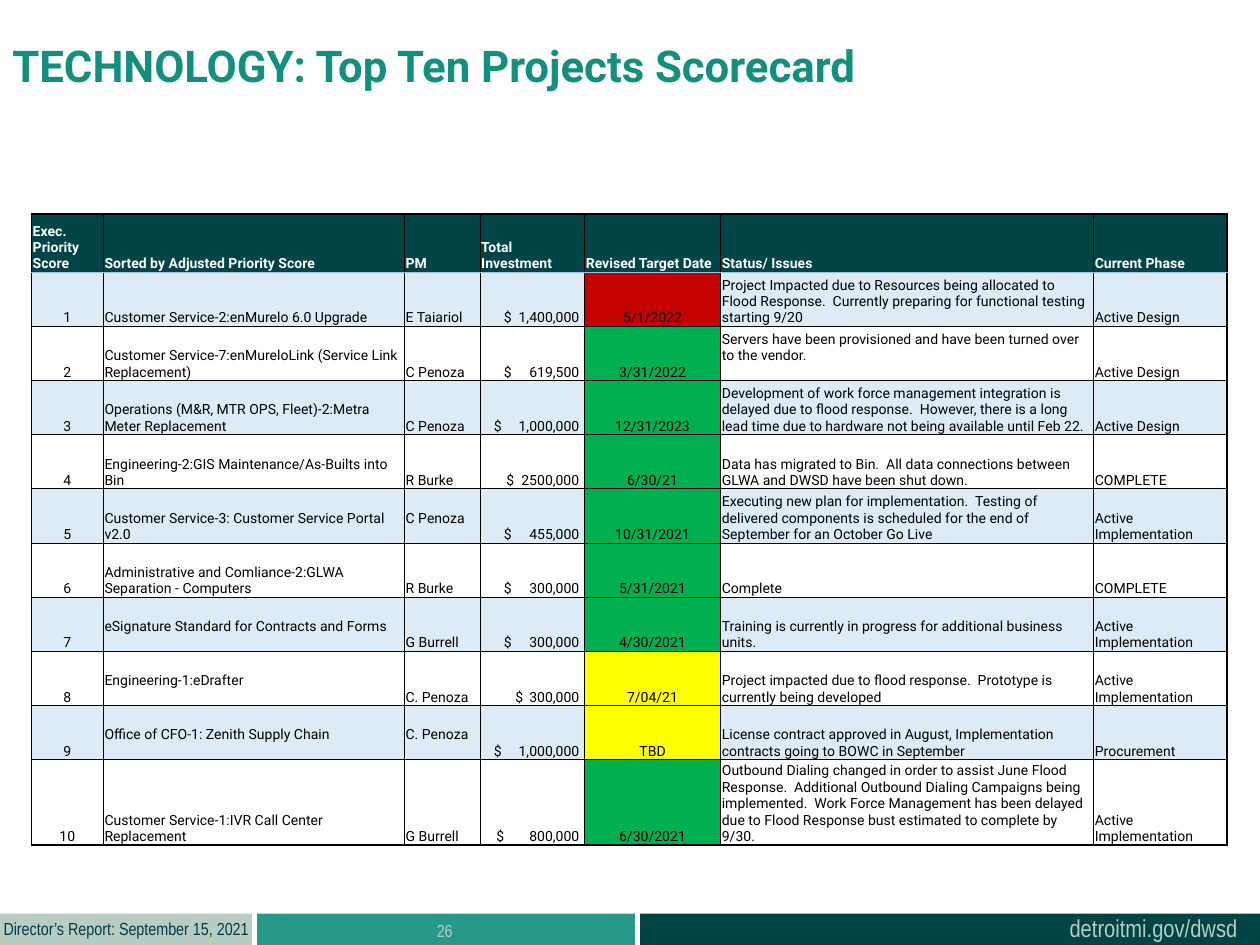
from dataclasses import dataclass

from lxml import etree
from pptx import Presentation
from pptx import util as u
from pptx.dml import color
from pptx.enum import shapes, text
from pptx.oxml import ns


@dataclass(frozen=True)
class Theme:
    teal: str = "279989"
    dark: str = "004445"
    sage: str = "B7CDC2"
    navy: str = "003B49"
    title: str = "138F7E"
    band: str = "DDEBF7"
    rule: str = "9BC2E6"
    white: str = "FFFFFF"
    black: str = "000000"
    late: str = "C40000"
    good: str = "00B050"
    watch: str = "FFFF00"
    body_font: str = "Roboto"
    footer_font: str = "Arial Narrow"
    title_size: int = 25
    web_size: int = 14
    footer_size: int = 10
    table_size: int = 8


theme = Theme()
LEFT, CENTER = text.PP_ALIGN.LEFT, text.PP_ALIGN.CENTER


def write(para, words, font, size, shade, bold=False, align=LEFT):
    para.alignment = align
    span = para.add_run()
    span.text = words
    formats = {"name": font, "size": u.Pt(size), "bold": bold}
    for name, value in formats.items():
        setattr(span.font, name, value)
    span.font.color.rgb = color.RGBColor.from_string(shade)


def add_border(cell, side, shade, points):
    line = etree.SubElement(cell._tc.get_or_add_tcPr(), ns.qn(f"a:ln{side}"),
                            w=str(u.Pt(points)))
    fill = etree.SubElement(line, ns.qn("a:solidFill"))
    etree.SubElement(fill, ns.qn("a:srgbClr"), val=shade)


deck = Presentation()
deck.slide_width, deck.slide_height = u.Inches(10), u.Inches(7.5)
page = deck.slides.add_slide(deck.slide_layouts[6])

# Footer bars
for left, width, shade in [(2.04, 3, theme.teal), (5.08, 4.92, theme.dark),
                           (0, 2, theme.sage)]:
    bar = page.shapes.add_shape(
        shapes.MSO_SHAPE.RECTANGLE, u.Inches(left), u.Inches(7.25),
        u.Inches(width), u.Inches(0.25))
    bar.shadow.inherit = False
    bar.fill.solid()
    bar.fill.fore_color.rgb = color.RGBColor.from_string(shade)
    bar.line.fill.background()

# Footer texts and title
labels = [
    ("detroitmi.gov/dwsd", (8.39, 7.2, 1.55, 0.34), False,
     (theme.footer_font, theme.web_size, theme.sage)),
    ("Director’s Report: September 15, 2021", (-0.07, 7.24, 2.16, 0.27), False,
     (theme.footer_font, theme.footer_size, theme.navy)),
    ("26", (2.03, 7.25, 3, 0.4), True,
     (theme.footer_font, theme.footer_size, theme.sage, False, CENTER)),
    ("TECHNOLOGY: Top Ten Projects Scorecard", (0, 0.26, 7.59, 0.77), True,
     (theme.body_font, theme.title_size, theme.title, True)),
]
for words, place, wrap, style in labels:
    box = page.shapes.add_textbox(*[u.Inches(length) for length in place])
    box.text_frame.word_wrap = wrap
    write(box.text_frame.paragraphs[0], words, *style)

# Scorecard content
headings = ["Exec. Priority Score", "Sorted by Adjusted Priority Score", "PM",
            "Total Investment", "Revised Target Date", "Status/ Issues",
            "Current Phase"]
projects = [
    ("Customer Service-2:enMurelo 6.0 Upgrade", "E Taiariol", "1,400,000", "5/1/2022",
     "Project Impacted due to Resources being allocated to Flood Response.  "
     "Currently preparing for functional testing starting 9/20", "Active Design"),
    ("Customer Service-7:enMureloLink (Service Link Replacement)", "C Penoza",
     "619,500", "3/31/2022",
     "Servers have been provisioned and have been turned over to the vendor.",
     "Active Design"),
    ("Operations (M&R, MTR OPS, Fleet)-2:Metra Meter Replacement", "C Penoza",
     "1,000,000", "12/31/2023",
     "Development of work force management integration is delayed due to flood "
     "response.  However, there is a long lead time due to hardware not being "
     "available until Feb 22.", "Active Design"),
    ("Engineering-2:GIS Maintenance/As-Builts into Bin", "R Burke", "2500,000",
     "6/30/21",
     "Data has migrated to Bin.  All data connections between GLWA and DWSD have "
     "been shut down.", "COMPLETE"),
    ("Customer Service-3: Customer Service Portal v2.0", "C Penoza", "455,000",
     "10/31/2021",
     "Executing new plan for implementation.  Testing of delivered components is "
     "scheduled for the end of September for an October Go Live",
     "Active Implementation"),
    ("Administrative and Comliance-2:GLWA Separation - Computers", "R Burke",
     "300,000", "5/31/2021", "Complete", "COMPLETE"),
    ("eSignature Standard for Contracts and Forms", "G Burrell", "300,000",
     "4/30/2021", "Training is currently in progress for additional business units.",
     "Active Implementation"),
    ("Engineering-1:eDrafter", "C. Penoza", "300,000", "7/04/21",
     "Project impacted due to flood response.  Prototype is currently being developed",
     "Active Implementation"),
    ("Office of CFO-1: Zenith Supply Chain", "C. Penoza", "1,000,000", "TBD",
     "License contract approved in August, Implementation contracts going to BOWC "
     "in September", "Procurement"),
    ("Customer Service-1:IVR Call Center Replacement", "G Burrell", "800,000",
     "6/30/2021",
     "Outbound Dialing changed in order to assist June Flood Response.  Additional "
     "Outbound Dialing Campaigns being implemented.  Work Force Management has been "
     "delayed due to Flood Response bust estimated to complete by 9/30.",
     "Active Implementation"),
]
rows = [headings] + [(str(rank), *project) for rank, project in enumerate(projects, 1)]
date_fills = {1: theme.late, 8: theme.watch, 9: theme.watch}
dollar_insets = [0.19, 0.19, 0.11, 0.21, 0.19, 0.19, 0.19, 0.28, 0.11, 0.13]
raised_cells = {(2, 5), (5, 2), (7, 1), (8, 1), (9, 1), (9, 2)}
MONEY, DATE, MONEY_END = 3, 4, 0.79

# Scorecard table
widths = [0.57, 2.39, 0.6, 0.83, 1.08, 2.96, 1.06]
heights = [0.46] + [0.43] * 9 + [0.67]
table = page.shapes.add_table(
    len(rows), len(widths), u.Inches(0.25), u.Inches(1.7),
    u.Inches(sum(widths)), u.Inches(sum(heights))).table
table.first_row = table.horz_banding = False
for column, width in zip(table.columns, widths):
    column.width = u.Inches(width)
for row, height in zip(table.rows, heights):
    row.height = u.Inches(height)

last_row, last_column = len(rows) - 1, len(widths) - 1
for r, values in enumerate(rows):
    for c, words in enumerate(values):
        cell = table.cell(r, c)
        header = r == 0
        money = c == MONEY and not header
        inset = dollar_insets[r - 1] if money else 0.01
        formats = {
            "vertical_anchor": text.MSO_ANCHOR.BOTTOM,
            "margin_left": u.Inches(inset),
            "margin_right": u.Inches(0.01),
            "margin_top": u.Inches(0.01),
            "margin_bottom": u.Inches(0.13 if (r, c) in raised_cells else 0),
        }
        for name, value in formats.items():
            setattr(cell, name, value)

        # Borders come before the fill in the cell properties
        add_border(cell, "L", theme.black, 1 if c == 0 else 0.5)
        add_border(cell, "R", theme.black, 1 if c == last_column else 0.5)
        add_border(cell, "T", theme.rule if r == 1 else theme.black, 1 if header else 0.5)
        add_border(cell, "B", theme.rule if header else theme.black,
                   1 if r == last_row else 0.5)

        if header:
            shade = theme.dark
        elif c == DATE:
            shade = date_fills.get(r, theme.good)
        else:
            shade = theme.band if r % 2 else theme.white
        cell.fill.solid()
        cell.fill.fore_color.rgb = color.RGBColor.from_string(shade)

        # A right tab lines up the amounts after the dollar sign
        para = cell.text_frame.paragraphs[0]
        if money:
            tabs = etree.SubElement(para._p.get_or_add_pPr(), ns.qn("a:tabLst"))
            etree.SubElement(tabs, ns.qn("a:tab"), algn="r",
                             pos=str(u.Inches(MONEY_END - inset)))
            words = f"$\t{words}"
        write(para, words, theme.body_font, theme.table_size,
              theme.white if header else theme.black, header,
              CENTER if c in (0, DATE) and not header else LEFT)

deck.save("out.pptx")
